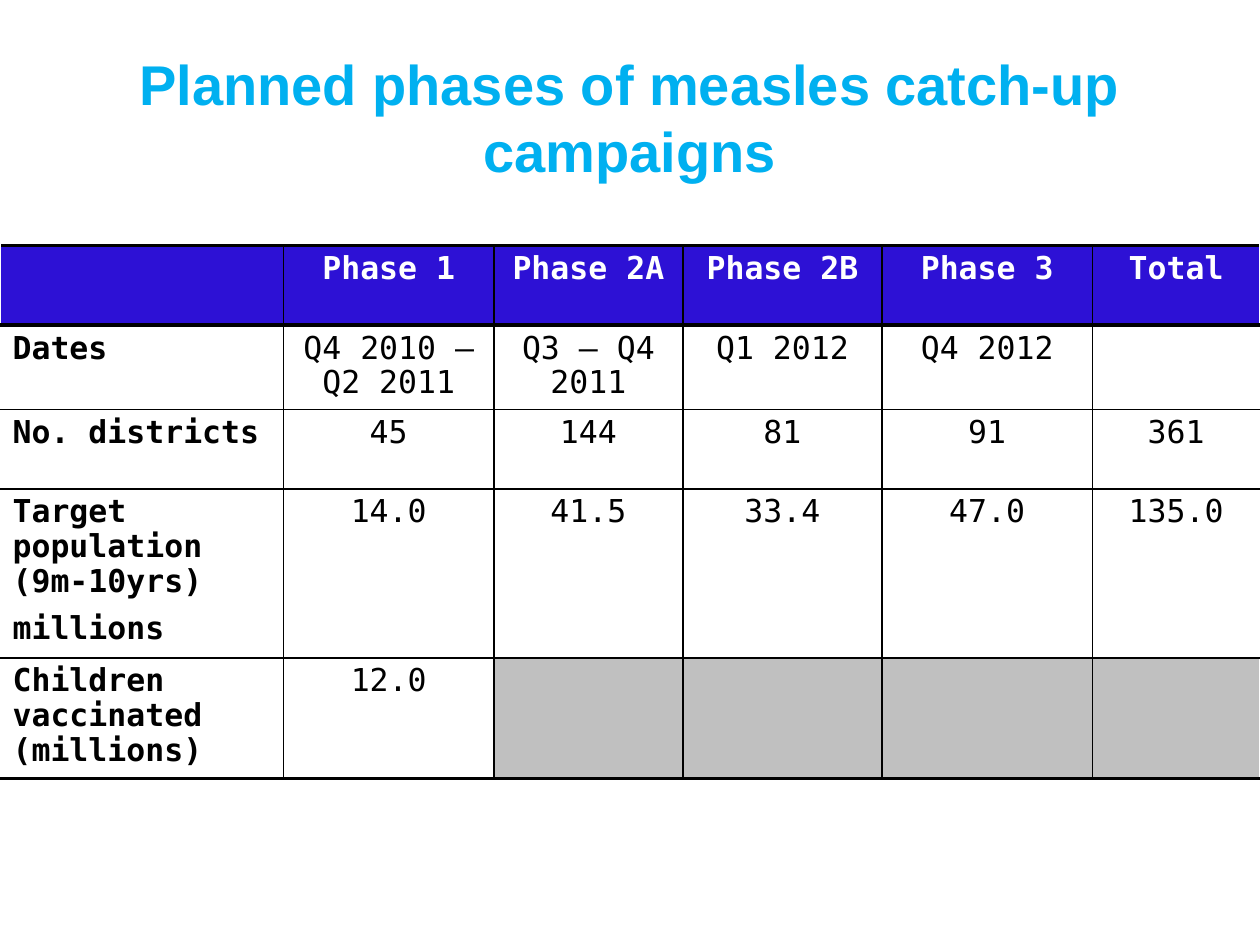
from lxml import etree
from pptx import Presentation
from pptx import util as u
from pptx.dml.color import RGBColor
from pptx.enum import text
from pptx.oxml.ns import qn

HUES = {"title": "00B0F0", "head": "2D11D5", "gray": "C0C0C0", "white": "FFFFFF", "black": "000000"}


def write(para, words, font, size, hue, bold):
    run = para.add_run()
    run.text = words
    run.font.name = font
    run.font.size = u.Pt(size)
    run.font.bold = bold
    run.font.color.rgb = RGBColor.from_string(HUES[hue])


def edge(cell, side, width):
    line = etree.SubElement(cell._tc.get_or_add_tcPr(), qn("a:ln" + side), w=str(u.Pt(width)))
    fill = etree.SubElement(line, qn("a:solidFill"))
    etree.SubElement(fill, qn("a:srgbClr"), val=HUES["black"])


deck = Presentation()
deck.slide_width = u.Inches(10)
deck.slide_height = u.Inches(7.5)
slide = deck.slides.add_slide(deck.slide_layouts[6])

box = slide.shapes.add_textbox(u.Inches(0.5), u.Inches(0.3), u.Inches(9), u.Inches(1.25))
frame = box.text_frame
frame.word_wrap = True
frame.vertical_anchor = text.MSO_ANCHOR.MIDDLE
frame.paragraphs[0].alignment = text.PP_ALIGN.CENTER
write(frame.paragraphs[0], "Planned phases of measles catch-up campaigns", "Arial", 32, "title", True)

rows = [
    ["", "Phase 1", "Phase 2A", "Phase 2B", "Phase 3", "Total"],
    ["Dates", "Q4 2010 – Q2 2011", "Q3 – Q4 2011", "Q1 2012", "Q4 2012", ""],
    ["No. districts", "45", "144", "81", "91", "361"],
    ["Target population (9m-10yrs)\nmillions", "14.0", "41.5", "33.4", "47.0", "135.0"],
    ["Children vaccinated (millions)", "12.0", "", "", "", ""],
]
widths = [2.25, 1.67, 1.5, 1.58, 1.67, 1.33]
heights = [0.63, 0.67, 0.63, 1.07, 0.95]
last_row, last_col = len(rows) - 1, len(widths) - 1

grid = slide.shapes.add_table(len(rows), len(widths), u.Inches(0), u.Inches(1.95),
                              u.Inches(10), u.Inches(sum(heights))).table
grid.first_row = False
grid.horz_banding = False
for col, width in zip(grid.columns, widths):
    col.width = u.Inches(width)
for row, height in zip(grid.rows, heights):
    row.height = u.Inches(height)

for r, row in enumerate(rows):
    for c, words in enumerate(row):
        cell = grid.cell(r, c)
        if c > 0:
            edge(cell, "L", 1)
        if c < last_col:
            edge(cell, "R", 1)
        edge(cell, "T", 2.25 if r < 2 else 1)
        edge(cell, "B", 2.25 if r in (0, last_row) else 1)
        back = "head" if r == 0 else "gray" if r == last_row and c > 1 else "white"
        cell.fill.solid()
        cell.fill.fore_color.rgb = RGBColor.from_string(HUES[back])
        if not words:
            continue
        for n, part in enumerate(words.split("\n")):
            para = cell.text_frame.add_paragraph() if n else cell.text_frame.paragraphs[0]
            para.line_spacing = 0.95
            if n:
                para.space_before = u.Pt(7.2)
            para.alignment = text.PP_ALIGN.CENTER if c else text.PP_ALIGN.LEFT
            write(para, part, "DejaVu Sans Mono", 18, "black" if r else "white", r == 0 or c == 0)

deck.save("out.pptx")
